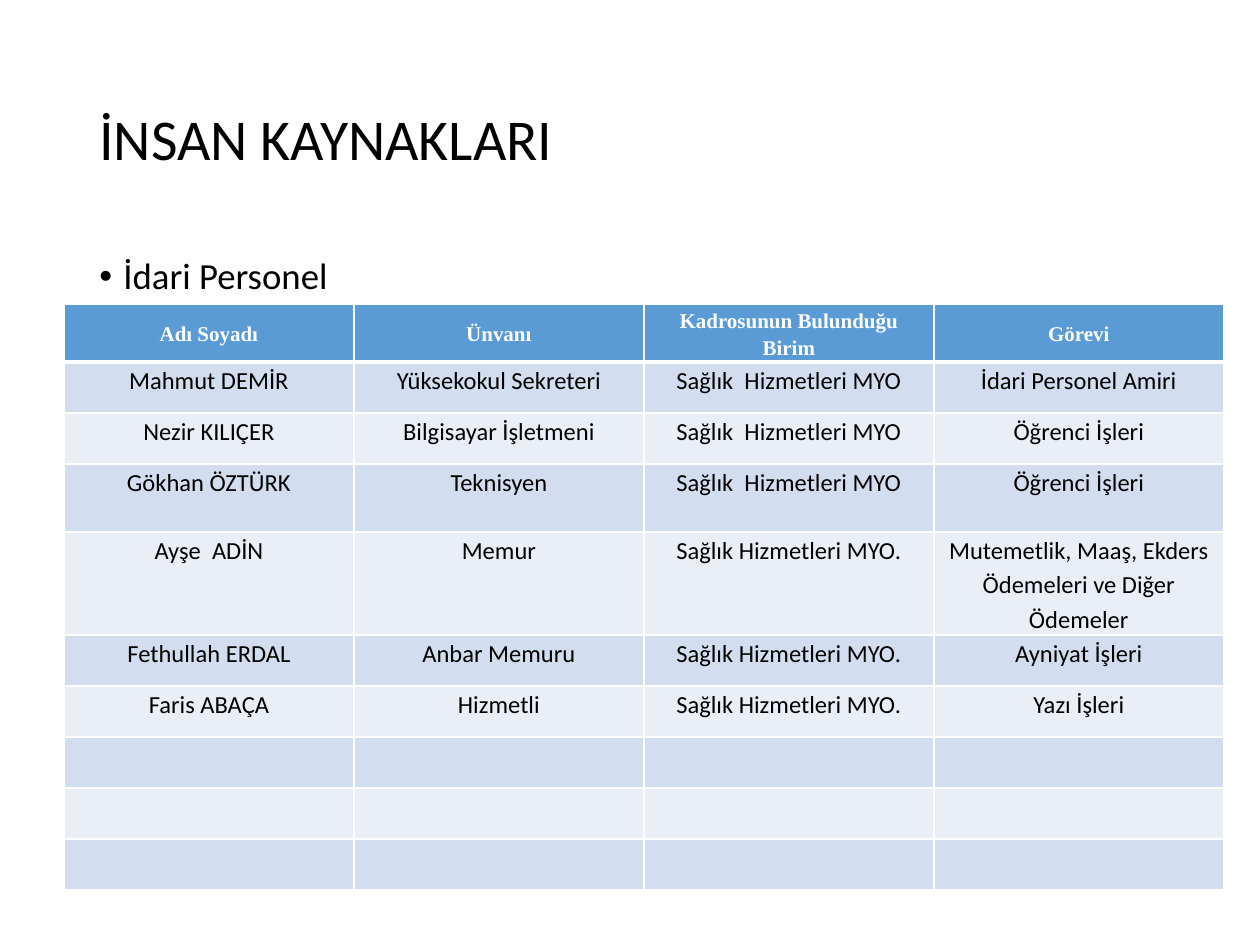
import lxml.etree
import pptx
import pptx.dml.color
import pptx.enum.text
import pptx.oxml.ns
import pptx.util

PX = 914400 // 126
BLACK = pptx.dml.color.RGBColor(0x00, 0x00, 0x00)
WHITE = pptx.dml.color.RGBColor(0xFF, 0xFF, 0xFF)
HEADER_BLUE = pptx.dml.color.RGBColor(0x5B, 0x9B, 0xD5)
BAND_BLUE = pptx.dml.color.RGBColor(0xD2, 0xDE, 0xEF)
BAND_PALE = pptx.dml.color.RGBColor(0xEA, 0xEF, 0xF7)
CENTER = pptx.enum.text.PP_ALIGN.CENTER
LEFT = pptx.enum.text.PP_ALIGN.LEFT
TOP = pptx.enum.text.MSO_ANCHOR.TOP
MIDDLE = pptx.enum.text.MSO_ANCHOR.MIDDLE

COLUMNS = ["Adı Soyadı", "Ünvanı", "Kadrosunun Bulunduğu Birim", "Görevi"]
STAFF = [
    ["Mahmut DEMİR", "Yüksekokul Sekreteri", "Sağlık  Hizmetleri MYO", "İdari Personel Amiri"],
    ["Nezir KILIÇER", "Bilgisayar İşletmeni", "Sağlık  Hizmetleri MYO", "Öğrenci İşleri"],
    ["Gökhan ÖZTÜRK", "Teknisyen", "Sağlık  Hizmetleri MYO", "Öğrenci İşleri"],
    ["Ayşe  ADİN", "Memur", "Sağlık Hizmetleri MYO.",
     "Mutemetlik, Maaş, Ekders Ödemeleri ve Diğer Ödemeler"],
    ["Fethullah ERDAL", "Anbar Memuru", "Sağlık Hizmetleri MYO.", "Ayniyat İşleri"],
    ["Faris ABAÇA", "Hizmetli", "Sağlık Hizmetleri MYO.", "Yazı İşleri"],
]
EMPTY_ROWS = 3
ROW_HEIGHT = 51
TALL_ROWS = {3: 68, 4: 103}


def add_child(parent, tag, **attributes):
    """Append a DrawingML element to its parent."""
    return lxml.etree.SubElement(parent, pptx.oxml.ns.qn(tag), **attributes)


def write_text(frame, text, size, font="Calibri", color=BLACK, bold=False,
               align=LEFT, spacing=0.9, before=0):
    """Write one formatted paragraph into a text frame and return it."""
    frame.word_wrap = True
    paragraph = frame.paragraphs[0]
    paragraph.alignment = align
    paragraph.line_spacing = spacing
    paragraph.space_before = pptx.util.Pt(before)
    run = paragraph.add_run()
    run.text = text
    run.font.size = pptx.util.Pt(size)
    run.font.name = font
    run.font.bold = bold
    run.font.color.rgb = color
    return paragraph


def add_title(slide, left, top, width, height):
    """Place the slide title, centred vertically in its box."""
    box = slide.shapes.add_textbox(left * PX, top * PX, width * PX, height * PX)
    box.text_frame.vertical_anchor = MIDDLE
    write_text(box.text_frame, "İNSAN KAYNAKLARI", size=33)


def add_subheading(slide, left, top, width, height):
    """Place the bulleted heading of the staff table."""
    box = slide.shapes.add_textbox(left * PX, top * PX, width * PX, height * PX)
    heading = write_text(box.text_frame, "İdari Personel", size=21, before=7.5)
    properties = heading._p.get_or_add_pPr()
    indent = 24 * PX
    properties.set("marL", str(indent))
    properties.set("indent", str(-indent))
    add_child(properties, "a:buFont", typeface="Arial")
    add_child(properties, "a:buChar", char="•")


def style_cell(cell, fill, bottom_border=1):
    """Give a cell white borders and a solid fill."""
    properties = cell._tc.get_or_add_tcPr()
    borders = {"a:lnL": 1, "a:lnR": 1, "a:lnT": 1, "a:lnB": bottom_border}
    for tag, points in borders.items():
        line = add_child(properties, tag, w=str(pptx.util.Pt(points)))
        add_child(add_child(line, "a:solidFill"), "a:srgbClr", val=str(WHITE))
    cell.fill.solid()
    cell.fill.fore_color.rgb = fill
    cell.margin_left = cell.margin_right = 9 * PX
    cell.margin_top = cell.margin_bottom = 0


def add_staff_table(slide, left, top, width, height):
    """Place the staff table with a header and alternating bands."""
    rows = [COLUMNS] + STAFF + [[""] * len(COLUMNS)] * EMPTY_ROWS
    table = slide.shapes.add_table(
        len(rows), len(COLUMNS), left * PX, top * PX, width * PX, height * PX).table
    for column in table.columns:
        column.width = width * PX // len(COLUMNS)
    for index, texts in enumerate(rows):
        table.rows[index].height = TALL_ROWS.get(index, ROW_HEIGHT) * PX
        is_header = index == 0
        band = BAND_BLUE if index % 2 else BAND_PALE
        for cell, text in zip(table.rows[index].cells, texts):
            style_cell(cell, HEADER_BLUE if is_header else band, 3 if is_header else 1)
            cell.vertical_anchor = MIDDLE if is_header else TOP
            if is_header:
                write_text(cell.text_frame, text, size=12, font="Times New Roman",
                           color=WHITE, bold=True, align=CENTER, spacing=1.15)
            elif text:
                write_text(cell.text_frame, text, size=14, align=CENTER, spacing=1.15)


def main():
    """Build the staff slide and save it."""
    deck = pptx.Presentation()
    deck.slide_width = 1260 * PX
    deck.slide_height = 945 * PX
    slide = deck.slides.add_slide(deck.slide_layouts[6])
    add_title(slide, 87, 50, 1086, 183)
    add_subheading(slide, 87, 252, 1086, 600)
    add_staff_table(slide, 64, 304, 1160, 580)
    deck.save("out.pptx")


if __name__ == "__main__":
    main()
